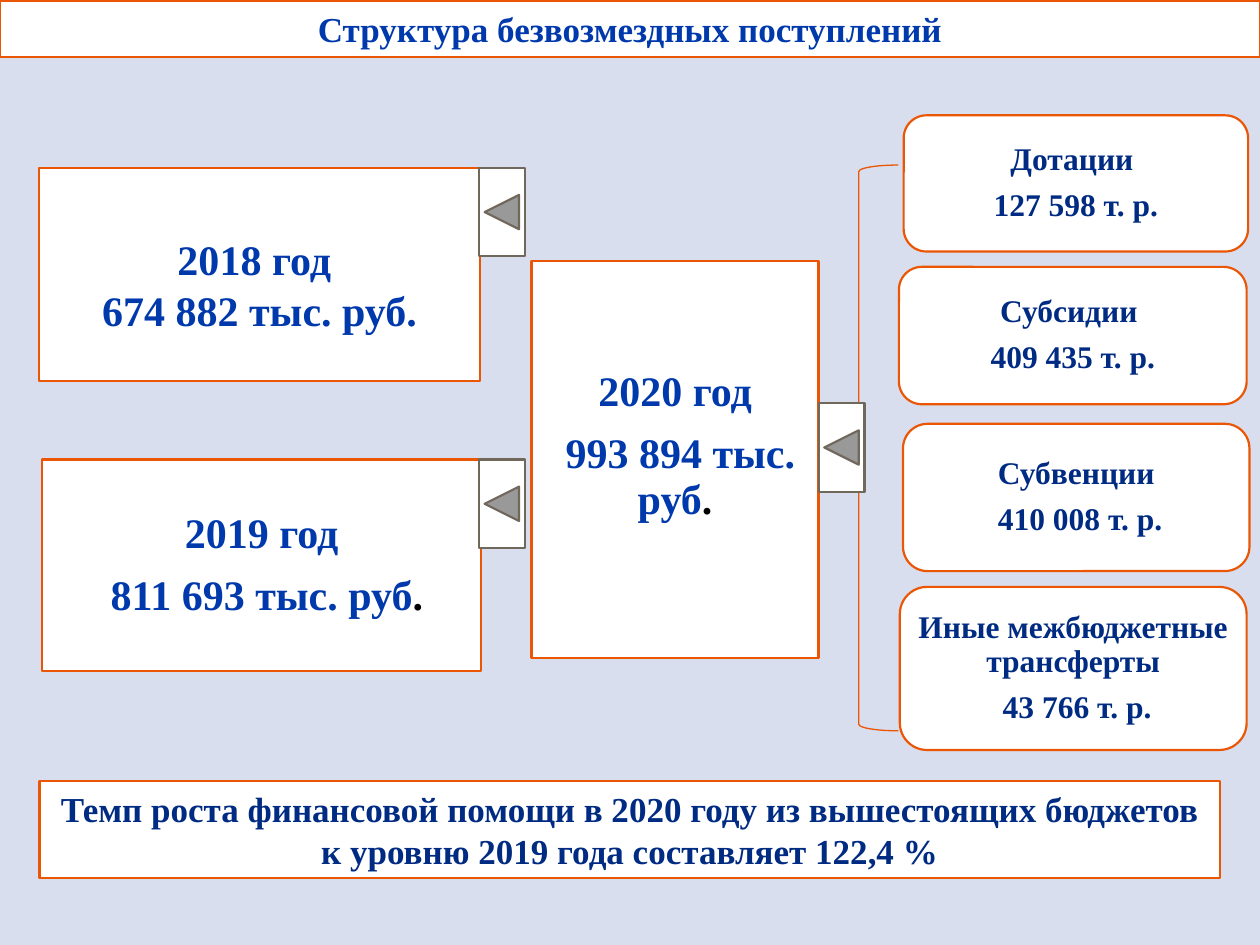
from pptx import Presentation
from pptx.dml.color import RGBColor
from pptx.enum.shapes import MSO_SHAPE
from pptx.enum.text import MSO_ANCHOR, MSO_AUTO_SIZE, PP_ALIGN
from pptx.util import Pt

RECT = MSO_SHAPE.RECTANGLE
CARD = MSO_SHAPE.ROUNDED_RECTANGLE
BRACE = MSO_SHAPE.LEFT_BRACE
BACK = MSO_SHAPE.ACTION_BUTTON_BACK_OR_PREVIOUS
TOP, MIDDLE = MSO_ANCHOR.TOP, MSO_ANCHOR.MIDDLE
CENTER = PP_ALIGN.CENTER
NO_FIT = MSO_AUTO_SIZE.NONE

FONT = "Times New Roman"
COLORS = {"back": "D8DEED", "white": "FFFFFF", "orange": "EB5605",
          "gray": "71685C", "blue": "0039AC", "navy": "002B82", "black": "000000"}

TITLE = "Структура безвозмездных поступлений"
TITLE_BOX = (0, 0.7, 720, 31.7)
GROWTH = ("Темп роста финансовой помощи в 2020 году из вышестоящих бюджетов "
          "к уровню 2019 года составляет 122,4 %")
GROWTH_BOX = (22.6, 446.2, 674.6, 55.4)

CARDS = [
    ((516.4, 65.9, 196.8, 77.8), ["Дотации ", "127 598 т. р."]),
    ((513.7, 152.5, 198.7, 78.5), ["Субсидии ", "409 435 т. р."]),
    ((516, 242.2, 198, 84.2), ["Субвенции", " 410 008 т. р."]),
    ((514.2, 335.4, 198.2, 93.2), ["Иные межбюджетные трансферты", " 43 766 т. р."]),
]
BRACE_BOX = (468, 94.3, 45.4, 323.3)

YEARS = [
    dict(box=(24.2, 262.6, 250.7, 121), lines=["2019 год", " 811 693 тыс. руб"], end=".",
         insets=(5, 5), anchor=MIDDLE, spacing=0.9, after=9.5),
    dict(box=(22.3, 95.9, 252, 121.7), lines=["2018 год ", "674 882 тыс. руб."],
         insets=(7.2, 37.7), anchor=TOP),
    dict(box=(303.8, 149.2, 164, 226.8), lines=["2020 год", " 993 894 тыс. руб"], end=".",
         insets=(7.2, 62.6), anchor=TOP, spacing=0.9, after=9.5),
]
BUTTON_SIZE = (26.2, 50.6)
BUTTONS = [(273.7, 95.9), (273.7, 262.6), (467.8, 230.4)]


def rgb(name):
    return RGBColor.from_string(COLORS[name])


def outline(s, color="orange", width=1.25, filled=True):
    if filled:
        s.fill.solid()
        s.fill.fore_color.rgb = rgb("white")
    else:
        s.fill.background()
    s.line.color.rgb = rgb(color)
    s.line.width = Pt(width)


def add_shape(kind, box, **style):
    s = slide.shapes.add_shape(kind, *map(Pt, box))
    s.shadow.inherit = False
    outline(s, **style)
    return s


def write(s, lines, size, color, insets=(7.2, 3.6), anchor=TOP, spacing=1, after=0, end=""):
    tf = s.text_frame
    tf.word_wrap = True
    tf.auto_size = NO_FIT
    tf.vertical_anchor = anchor
    tf.margin_left = tf.margin_right = Pt(insets[0])
    tf.margin_top = Pt(insets[1])
    tf.margin_bottom = Pt(insets[1] if anchor == MIDDLE else 3.6)
    tf.text = "\n".join(lines)
    if end:
        tf.paragraphs[-1].add_run().text = end
    for p in tf.paragraphs:
        p.alignment = CENTER
        p.line_spacing = spacing
        p.space_before = Pt(0)
        p.space_after = Pt(after)
        for r in p.runs:
            r.font.name = FONT
            r.font.size = Pt(size)
            r.font.bold = True
            r.font.color.rgb = rgb("black" if r.text == end else color)


prs = Presentation()
prs.slide_width, prs.slide_height = Pt(720), Pt(540)
slide = prs.slides.add_slide(prs.slide_layouts[5])
slide.background.fill.solid()
slide.background.fill.fore_color.rgb = rgb("back")

title = slide.shapes.title
title.left, title.top, title.width, title.height = map(Pt, TITLE_BOX)
outline(title)
write(title, [TITLE], 20, "blue")

for box, lines in CARDS:
    write(add_shape(CARD, box), lines, 18, "navy", insets=(5, 2.9), anchor=MIDDLE,
          spacing=0.9, after=7)

write(add_shape(RECT, GROWTH_BOX), [GROWTH], 20, "navy")
add_shape(BRACE, BRACE_BOX, width=0.75, filled=False)

for year in YEARS:
    text = {key: value for key, value in year.items() if key != "box"}
    write(add_shape(RECT, year["box"]), size=24, color="blue", **text)

for corner in BUTTONS:
    add_shape(BACK, corner + BUTTON_SIZE, color="gray")

prs.save("out.pptx")
